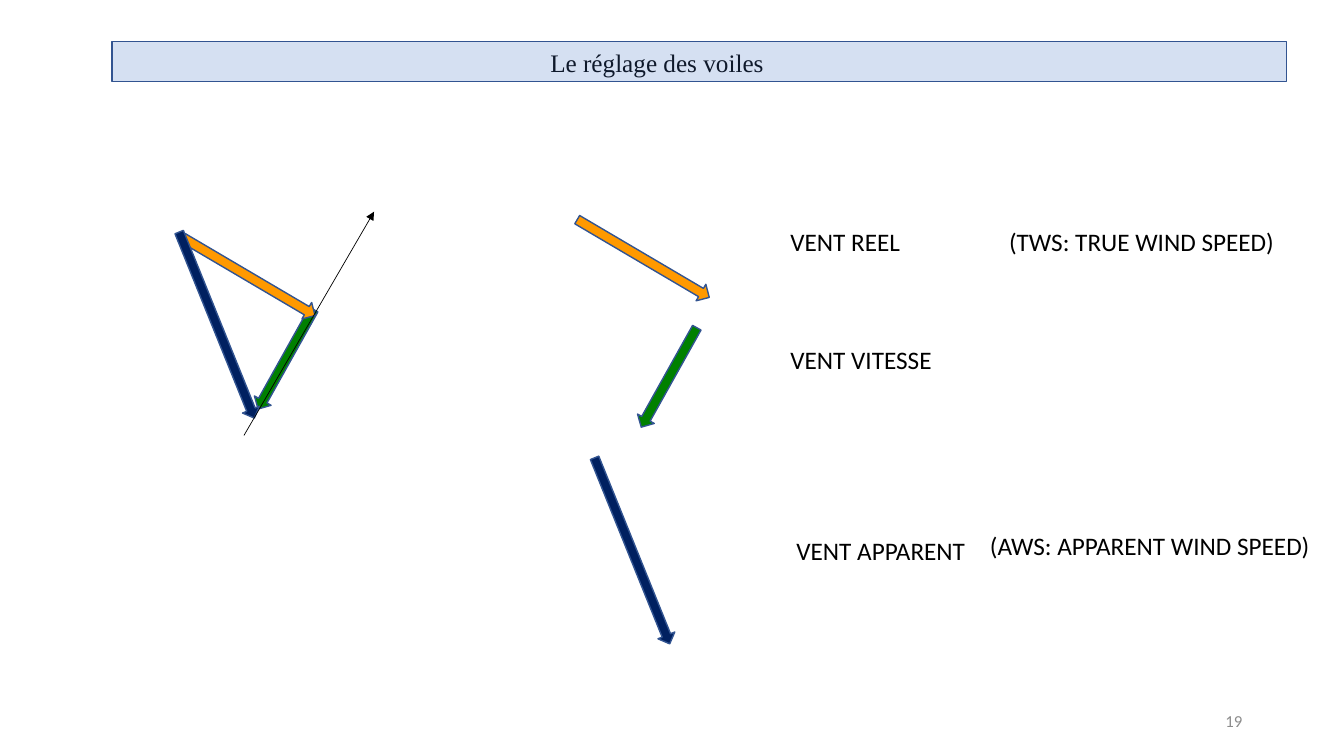
from dataclasses import dataclass

from lxml.etree import SubElement
from pptx import Presentation
from pptx.dml.color import RGBColor
from pptx.enum.shapes import MSO_CONNECTOR, MSO_SHAPE
from pptx.enum.text import MSO_ANCHOR, MSO_AUTO_SIZE, PP_ALIGN
from pptx.oxml.ns import qn
from pptx.slide import Slide
from pptx.util import Inches, Pt


@dataclass(frozen=True)
class Theme:
    black: RGBColor = RGBColor(0x00, 0x00, 0x00)
    grey: RGBColor = RGBColor(0x8C, 0x8C, 0x8C)
    banner: RGBColor = RGBColor(0x44, 0x72, 0xC4)
    outline: RGBColor = RGBColor(0x32, 0x54, 0x91)
    true_wind: RGBColor = RGBColor(0xFF, 0x99, 0x00)
    speed_wind: RGBColor = RGBColor(0x00, 0x80, 0x00)
    apparent_wind: RGBColor = RGBColor(0x00, 0x20, 0x60)
    title_font: str = "Times New Roman"
    body_font: str = "Calibri"
    body_size: int = 18
    number_size: int = 12


@dataclass(frozen=True)
class Wind:
    kind: MSO_SHAPE
    color: RGBColor
    width: float
    height: float
    rotation: float
    in_triangle: tuple[float, float]
    in_legend: tuple[float, float]


@dataclass(frozen=True)
class Label:
    text: str
    left: float
    top: float
    width: float
    font: str
    height: float = 0.4


THEME = Theme()

WINDS = [
    Wind(MSO_SHAPE.RIGHT_ARROW, THEME.speed_wind, 1.13, 0.19, 119.2,
         (2.27, 3.47), (6.07, 3.65)),
    Wind(MSO_SHAPE.RIGHT_ARROW, THEME.true_wind, 1.52, 0.19, 30.5,
         (1.71, 2.65), (5.62, 2.47)),
    Wind(MSO_SHAPE.DOWN_ARROW, THEME.apparent_wind, 0.18, 1.99, 338,
         (2.06, 2.23), (6.18, 4.47)),
]

TITLE = Label("Le réglage des voiles", 5.36, 0.42, 2.34, THEME.title_font)
LEGEND = [
    Label("VENT REEL", 7.74, 2.2, 1.3, THEME.body_font),
    Label("VENT VITESSE", 7.74, 3.37, 1.62, THEME.body_font),
    Label("VENT APPARENT", 7.8, 5.26, 1.89, THEME.body_font),
    Label("(TWS: TRUE WIND SPEED)", 9.91, 2.2, 2.86, THEME.body_font),
    Label("(AWS: APPARENT WIND SPEED)", 9.72, 5.21, 3.4, THEME.body_font),
]
PAGE = Label("19", 9.42, 6.95, 3, THEME.body_font)


def add_label(slide: Slide, label: Label, size: int = THEME.body_size,
              color: RGBColor = THEME.black):
    """Add one line of text and return its text frame."""
    frame = slide.shapes.add_textbox(
        Inches(label.left), Inches(label.top),
        Inches(label.width), Inches(label.height)).text_frame
    frame.text = label.text
    frame.word_wrap = False
    frame.auto_size = MSO_AUTO_SIZE.SHAPE_TO_FIT_TEXT
    font = frame.paragraphs[0].runs[0].font
    font.name, font.size, font.color.rgb = label.font, Pt(size), color
    return frame


def add_outlined(slide: Slide, kind: MSO_SHAPE, left: float, top: float,
                 width: float, height: float, color: RGBColor):
    """Add a filled shape with the common outline."""
    outlined = slide.shapes.add_shape(
        kind, Inches(left), Inches(top), Inches(width), Inches(height))
    outlined.shadow.inherit = False
    outlined.fill.solid()
    outlined.fill.fore_color.rgb = color
    outlined.line.color.rgb = THEME.outline
    outlined.line.width = Pt(1)
    return outlined


def add_banner(slide: Slide) -> None:
    banner = add_outlined(slide, MSO_SHAPE.RECTANGLE, 1.11, 0.41, 11.65, 0.4,
                          THEME.banner)
    tint = banner.fill._xPr.find(qn("a:solidFill"))[0]
    SubElement(tint, qn("a:alpha"), val="22000")


def add_wind(slide: Slide, wind: Wind, position: tuple[float, float]) -> None:
    arrow = add_outlined(slide, wind.kind, *position, wind.width, wind.height,
                         wind.color)
    arrow.rotation = wind.rotation


def add_heading(slide: Slide) -> None:
    """Draw the thin arrow for the course of the boat."""
    heading = slide.shapes.add_connector(
        MSO_CONNECTOR.STRAIGHT,
        Inches(2.42), Inches(4.32), Inches(3.71), Inches(2.1))
    heading.line.color.rgb = THEME.black
    heading.line.width = Pt(0.5)
    SubElement(heading.line._get_or_add_ln(), qn("a:tailEnd"), type="triangle")
    SubElement(heading._element.spPr, qn("a:effectLst"))


def add_page_number(slide: Slide) -> None:
    frame = add_label(slide, PAGE, THEME.number_size, THEME.grey)
    frame.auto_size = MSO_AUTO_SIZE.NONE
    frame.word_wrap = True
    frame.vertical_anchor = MSO_ANCHOR.MIDDLE
    frame.paragraphs[0].alignment = PP_ALIGN.RIGHT


def main() -> None:
    deck = Presentation()
    deck.slide_width, deck.slide_height = Inches(13.33), Inches(7.5)
    slide = deck.slides.add_slide(deck.slide_layouts[6])

    # Title under its translucent banner
    add_label(slide, TITLE)
    add_banner(slide)

    # Wind triangle with the boat's heading
    for wind in WINDS:
        add_wind(slide, wind, wind.in_triangle)
    add_heading(slide)

    # Legend
    for wind in WINDS:
        add_wind(slide, wind, wind.in_legend)
    for label in LEGEND:
        add_label(slide, label)

    add_page_number(slide)
    deck.save("out.pptx")


if __name__ == "__main__":
    main()
